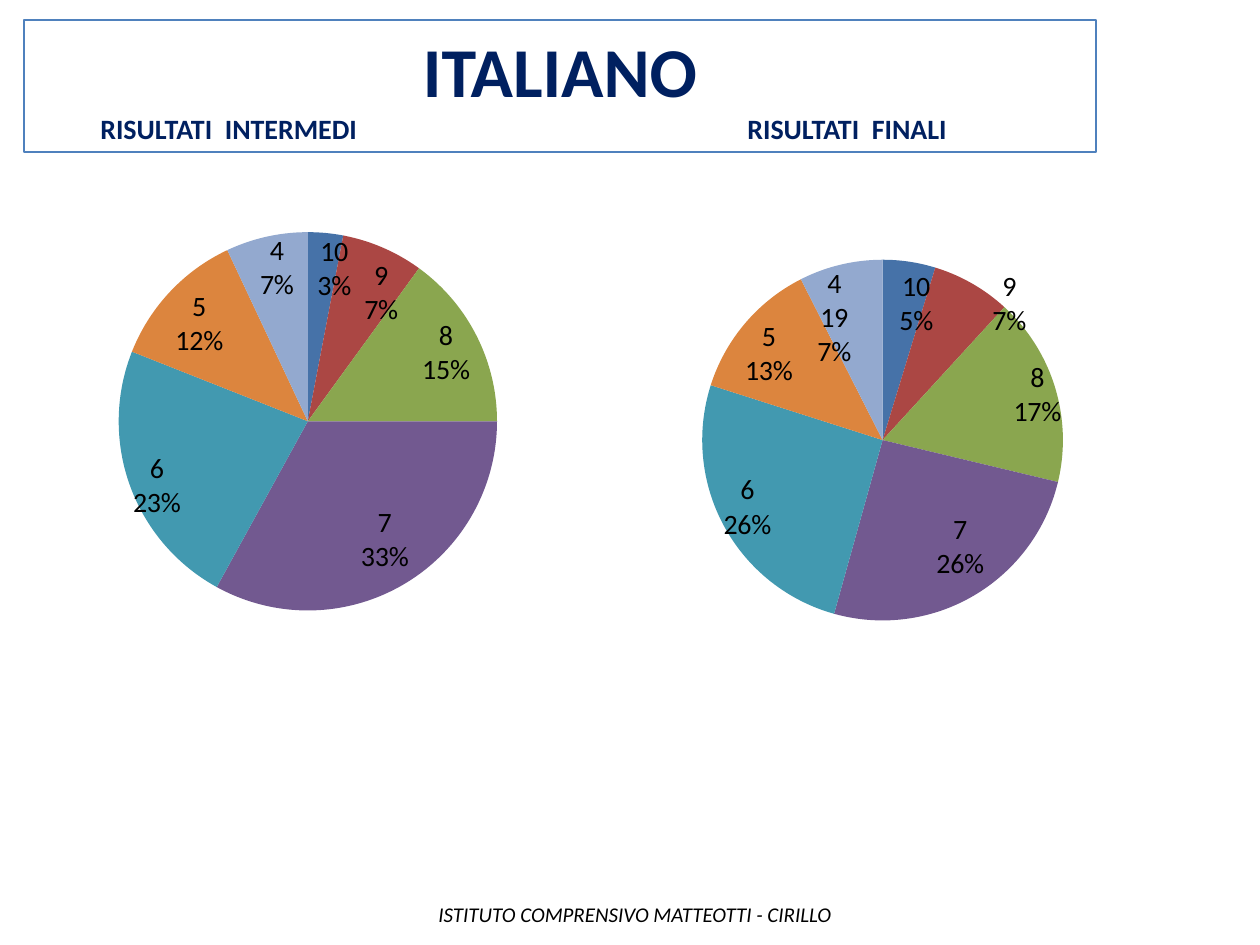
from lxml import etree
from pptx import Presentation
from pptx.chart.data import CategoryChartData
from pptx.dml.color import RGBColor
from pptx.enum.chart import XL_CHART_TYPE, XL_LABEL_POSITION
from pptx.enum.shapes import MSO_SHAPE
from pptx.enum.text import MSO_ANCHOR, PP_ALIGN
from pptx.oxml import parse_xml
from pptx.oxml.ns import qn
from pptx.util import Pt

PX = 914400 // 126
PIE = XL_CHART_TYPE.PIE
INSIDE_END = XL_LABEL_POSITION.INSIDE_END
RECTANGLE = MSO_SHAPE.RECTANGLE
MIDDLE = MSO_ANCHOR.MIDDLE
CENTER, LEFT = PP_ALIGN.CENTER, PP_ALIGN.LEFT
CHART_NS = "http://schemas.openxmlformats.org/drawingml/2006/chart"


def color(value):
    return RGBColor.from_string(value)


def style(font, ink, **formats):
    font.color.rgb = color(ink)
    for name, value in {"name": "Calibri", **formats}.items():
        setattr(font, name, value)


deck = Presentation()
deck.slide_width, deck.slide_height = 1260 * PX, 945 * PX
page = deck.slides.add_slide(deck.slide_layouts[6])

# Framed title with the two chart headings
title = page.shapes.add_shape(RECTANGLE, 24 * PX, 20 * PX, 1072 * PX, 132 * PX)
title.shadow.inherit = False
title.fill.background()
title.line.color.rgb = color("4F81BD")
title.line.width = Pt(0.75)
title.text_frame.vertical_anchor = MIDDLE
title_lines = [
    ("ITALIANO", 40, CENTER),
    ("\tRISULTATI  INTERMEDI\tRISULTATI  FINALI", 16, LEFT),
]
title.text_frame.text = "\n".join(line[0] for line in title_lines)
for para, (_, size, align) in zip(title.text_frame.paragraphs, title_lines):
    para.alignment = align
    for span in para.runs:
        style(span.font, "002060", size=Pt(size), bold=True)

# Tab stops place the headings above their charts
tab_list = etree.SubElement(para._p.get_or_add_pPr(), qn("a:tabLst"))
for stop in (64, 711):
    etree.SubElement(tab_list, qn("a:tab"), pos=str(stop * PX), algn="l")

# Pie charts: frame in px, plot area as fractions of the frame,
# values, label shifts in px, slices that also show their count
grades = ["10", "9", "8", "7", "6", "5", "4"]
slice_colors = ["4672A8", "AB4744", "8AA64F", "725990", "4299B0", "DC853E", "93A9CF"]
pies = [
    (
        (24, 175, 546, 440), (0.11, 0.13, 0.82, 0.86),
        [3, 7, 15, 33, 23, 12, 7],
        [(26, -5), (18, 5), (0, -20), (8, -3), (-4, 38), (0, -7), (-8, -10)],
        [],
    ),
    (
        (660, 185, 530, 440), (0.01, 0.17, 0.82, 0.82),
        [12, 18, 43, 65, 65, 32, 19],
        [(25, 1), (58, -20), (13, -28), (14, -8), (-7, 20), (-6, -8), (-25, -5)],
        [6],
    ),
]
for frame, plot_area, values, label_shifts, counted in pies:
    data = CategoryChartData()
    data.categories = grades
    data.add_series("Series 1", values)
    chart = page.shapes.add_chart(PIE, *(side * PX for side in frame), data).chart
    chart.has_legend = False
    chart.has_title = False
    style(chart.font, "000000", size=Pt(16))
    plot = chart.plots[0]
    plot.vary_by_categories = True
    series = plot.series[0]
    for index, fill_color in enumerate(slice_colors):
        fill = series.points[index].format.fill
        fill.solid()
        fill.fore_color.rgb = color(fill_color)

    # Grade and percentage on every slice
    labels = series.data_labels
    formats = {
        "show_category_name": True,
        "show_percentage": True,
        "show_value": False,
        "show_legend_key": False,
        "position": INSIDE_END,
    }
    for name, value in formats.items():
        setattr(labels, name, value)
    labels._element.find(qn("c:showBubbleSize")).addnext(
        parse_xml(f'<c:separator xmlns:c="{CHART_NS}">\n</c:separator>')
    )
    for leader in labels._element.findall(qn("c:showLeaderLines")):
        leader.set("val", "0")

    # Shift each label from its default place
    for index, (right, down) in enumerate(label_shifts):
        label = parse_xml(
            f'<c:dLbl xmlns:c="{CHART_NS}"><c:idx val="{index}"/>'
            f'<c:layout><c:manualLayout><c:x val="{right / frame[2]:.3f}"/>'
            f'<c:y val="{down / frame[3]:.3f}"/></c:manualLayout></c:layout>'
            '<c:dLblPos val="inEnd"/><c:showLegendKey val="0"/>'
            f'<c:showVal val="{int(index in counted)}"/>'
            '<c:showCatName val="1"/><c:showSerName val="0"/><c:showPercent val="1"/>'
            '<c:showBubbleSize val="0"/><c:separator>\n</c:separator></c:dLbl>'
        )
        labels._element.insert(index, label)

    # Fixed inner plot area
    area = chart._chartSpace.find(".//" + qn("c:plotArea"))
    for old_layout in area.findall(qn("c:layout")):
        area.remove(old_layout)
    layout = etree.Element(qn("c:layout"))
    manual = etree.SubElement(layout, qn("c:manualLayout"))
    settings = [("layoutTarget", "inner"), ("xMode", "edge"), ("yMode", "edge")]
    for name, value in settings + list(zip("xywh", plot_area)):
        etree.SubElement(manual, qn("c:" + name), val=str(value))
    area.insert(0, layout)

# Footer
footer = page.shapes.add_textbox(426 * PX, 895 * PX, 430 * PX, 38 * PX)
footer.text_frame.word_wrap = False
span = footer.text_frame.paragraphs[0].add_run()
span.text = "ISTITUTO COMPRENSIVO MATTEOTTI - CIRILLO"
style(span.font, "000000", size=Pt(12), italic=True)

deck.save("out.pptx")
